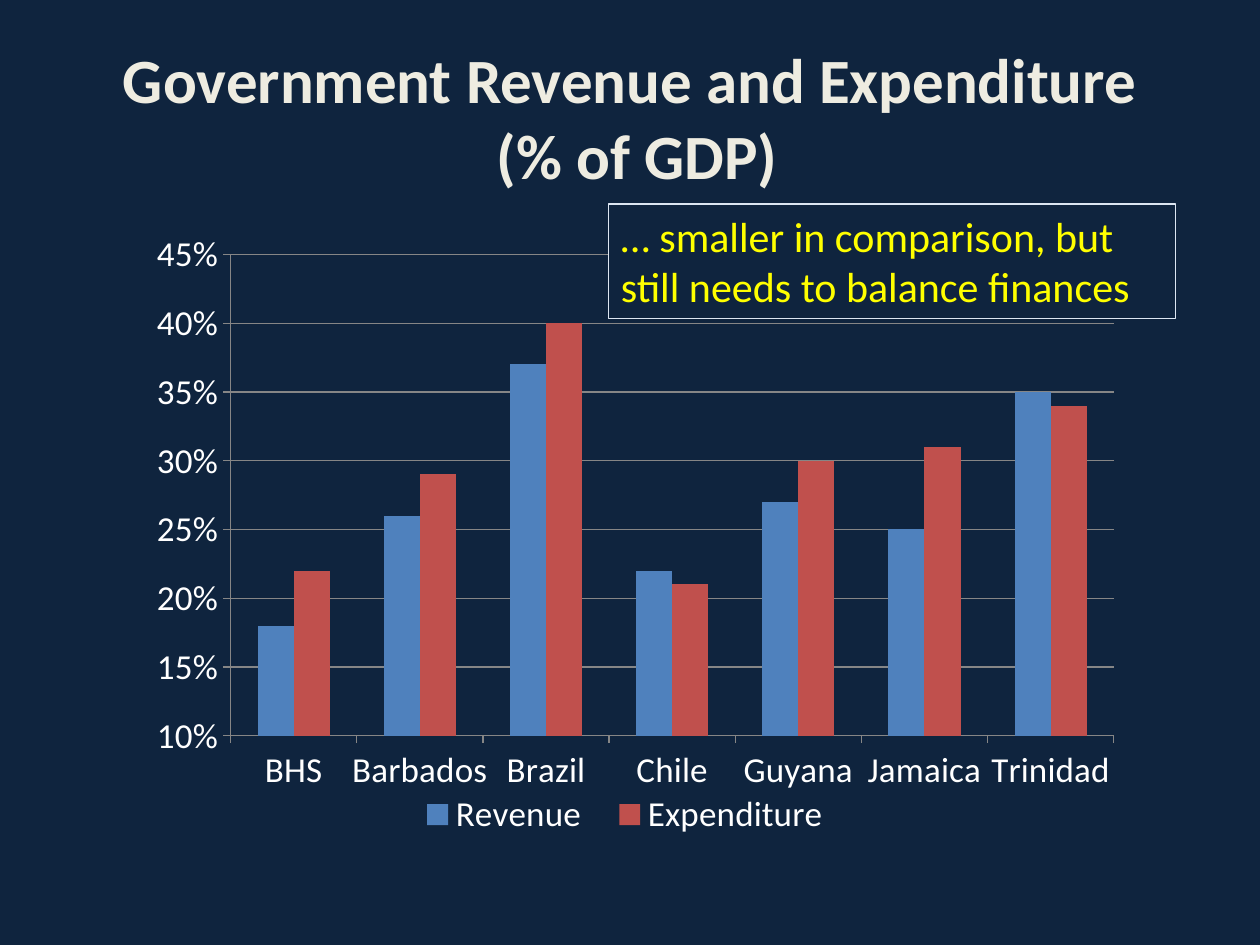
from lxml.etree import SubElement
from pptx import Presentation
from pptx.chart.data import CategoryChartData
from pptx.dml.color import RGBColor
from pptx.enum.chart import XL_CHART_TYPE, XL_LEGEND_POSITION, XL_TICK_MARK
from pptx.enum.shapes import MSO_SHAPE
from pptx.enum.text import MSO_ANCHOR, PP_ALIGN
from pptx.oxml.ns import qn
from pptx.util import Inches, Pt

TITLE = "Government Revenue and Expenditure\v (% of GDP)"
NOTE = "… smaller in comparison, but still needs to balance finances"
LANDS = ["BHS", "Barbados", "Brazil", "Chile", "Guyana", "Jamaica", "Trinidad"]
SERIES = {
    "Revenue": [0.18, 0.26, 0.37, 0.22, 0.27, 0.25, 0.35],
    "Expenditure": [0.22, 0.29, 0.4, 0.21, 0.3, 0.31, 0.34],
}
COLORS = {
    "back": "0F243E", "title": "EEECE1", "text": "FFFFFF", "note": "FFFF00",
    "edge": "DCE6F2", "grid": "868686",
    "Revenue": "4F81BD", "Expenditure": "C0504D",
}
BOXES = {
    "title": (0.5, 0.3, 9, 1.25),
    "chart": (1.08, 1.75, 7.92, 5.17),
    "note": (4.83, 1.62, 4.5, 0.91),
}
PLOT = (0.75, 0.27, 7.01, 3.82)
LEGEND = (2.1, 4.51, 3.56, 0.41)


def color(name):
    return RGBColor.from_string(COLORS[name])


def box(name):
    return [Inches(n) for n in BOXES[name]]


def style(font, size, name, bold=False):
    font.name, font.size, font.bold = "Calibri", Pt(size), bold
    font.color.rgb = color(name)


def paint(fill, name):
    fill.solid()
    fill.fore_color.rgb = color(name)


def stroke(line, name):
    line.color.rgb = color(name)
    line.width = Pt(0.75)


def place(node, spot, index, inner=False):
    for old in node.findall(qn("c:layout")):
        node.remove(old)
    layout = SubElement(node, qn("c:layout"))
    node.insert(index, layout)
    manual = SubElement(layout, qn("c:manualLayout"))
    wide, high = BOXES["chart"][2:]
    shares = [n / size for n, size in zip(spot, (wide, high) * 2)]
    parts = [("layoutTarget", "inner")] if inner else []
    parts += [("xMode", "edge"), ("yMode", "edge"), *zip("xywh", shares)]
    for tag, val in parts:
        SubElement(manual, qn(f"c:{tag}")).set("val", str(val))


def add_title(slide):
    title = slide.shapes.title
    title.left, title.top, title.width, title.height = box("title")
    frame = title.text_frame
    frame.text = TITLE
    frame.word_wrap = True
    frame.vertical_anchor = MSO_ANCHOR.MIDDLE
    para = frame.paragraphs[0]
    para.alignment = PP_ALIGN.CENTER
    style(para.font, 36, "title", True)


def add_bars(slide):
    data = CategoryChartData(number_format="0%")
    data.categories = LANDS
    for name, vals in SERIES.items():
        data.add_series(name, vals)
    chart = slide.shapes.add_chart(
        XL_CHART_TYPE.COLUMN_CLUSTERED, *box("chart"), data).chart
    style(chart.font, 20, "text")
    chart.has_title = False
    plot = chart.plots[0]
    plot.gap_width, plot.overlap, plot.vary_by_categories = 150, 0, False
    for bars in plot.series:
        paint(bars.format.fill, bars.name)
    for axis in (chart.category_axis, chart.value_axis):
        axis.major_tick_mark = XL_TICK_MARK.OUTSIDE
        axis.minor_tick_mark = XL_TICK_MARK.NONE
        stroke(axis.format.line, "grid")
    scale = chart.value_axis
    scale.minimum_scale, scale.maximum_scale, scale.major_unit = 0.1, 0.45, 0.05
    scale.tick_labels.number_format = "0%"
    scale.tick_labels.number_format_is_linked = False
    scale.has_major_gridlines = True
    stroke(scale.major_gridlines.format.line, "grid")
    chart.has_legend = True
    chart.legend.position = XL_LEGEND_POSITION.BOTTOM
    chart.legend.include_in_layout = False
    area = chart.element.find(".//" + qn("c:plotArea"))
    place(area, PLOT, 0, True)
    place(chart.element.find(".//" + qn("c:legend")), LEGEND, 1)


def add_note(slide):
    note = slide.shapes.add_shape(MSO_SHAPE.RECTANGLE, *box("note"))
    note.shadow.inherit = False
    paint(note.fill, "back")
    stroke(note.line, "edge")
    frame = note.text_frame
    frame.text = NOTE
    frame.word_wrap = True
    frame.vertical_anchor = MSO_ANCHOR.TOP
    para = frame.paragraphs[0]
    para.alignment = PP_ALIGN.LEFT
    style(para.font, 24, "note")


def main():
    deck = Presentation()
    deck.slide_width, deck.slide_height = Inches(10), Inches(7.5)
    slide = deck.slides.add_slide(deck.slide_layouts[5])
    paint(slide.background.fill, "back")
    add_title(slide)
    add_bars(slide)
    add_note(slide)
    deck.save("out.pptx")


if __name__ == "__main__":
    main()
